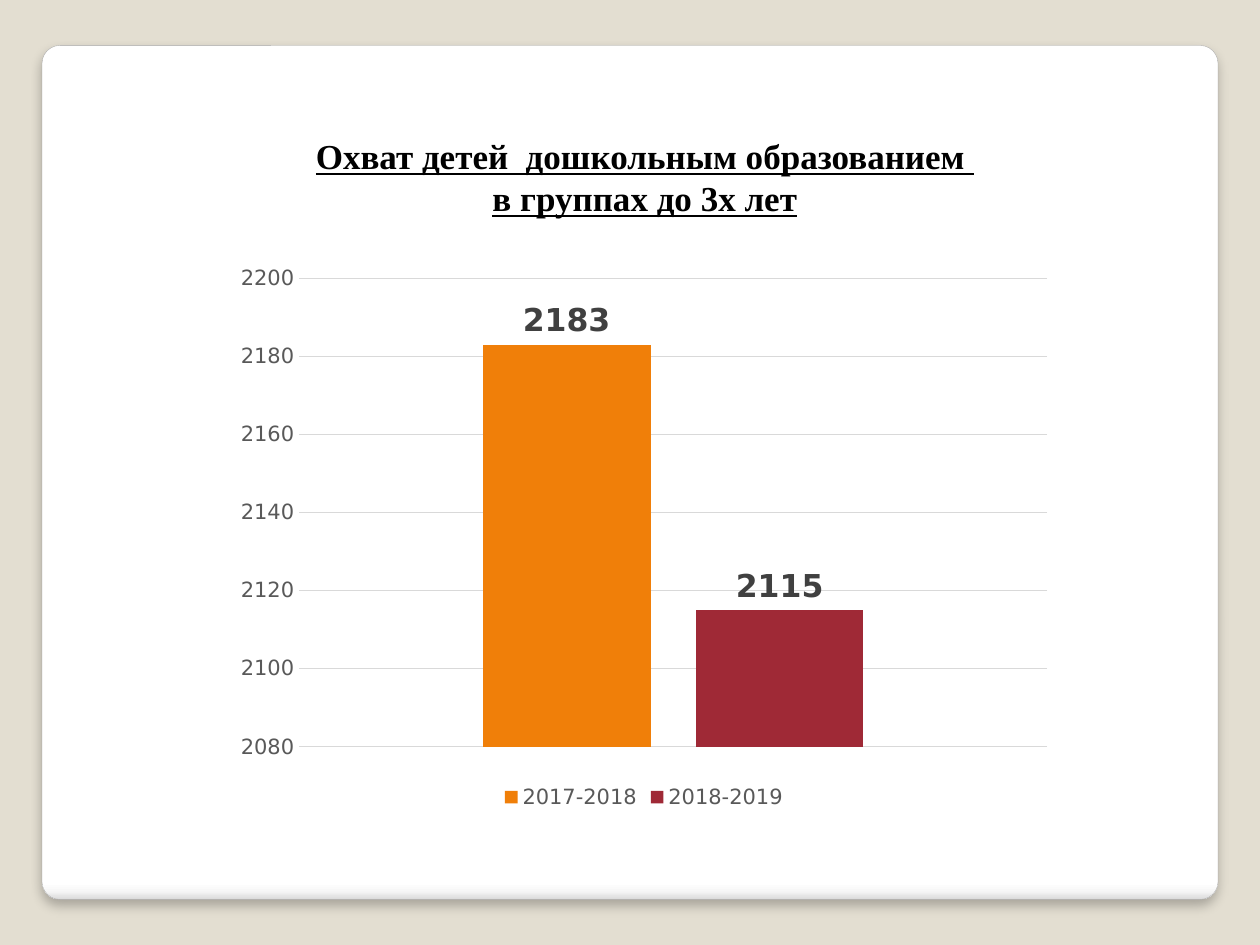
from lxml import etree
from pptx import Presentation
from pptx import util as u
from pptx.chart import data
from pptx.dml import color
from pptx.enum import chart as ch, shapes, text

NS = "http://schemas.openxmlformats.org/drawingml/2006/main"


def rgb(value):
    """Return the colour for a hex string."""
    return color.RGBColor.from_string(value)


def set_font(font, name, size, hex_color, bold=False, underline=None):
    """Set the typeface, size, colour and weight of a font."""
    font.name, font.size = name, u.Pt(size)
    font.bold, font.underline = bold, underline
    font.color.rgb = rgb(hex_color)


def add_card(s, x, y, w, h):
    """Add the rounded white card with a shaded foot and a soft shadow."""
    sp = s.shapes.add_shape(shapes.MSO_SHAPE.ROUNDED_RECTANGLE,
                            u.Pt(x), u.Pt(y), u.Pt(w), u.Pt(h))
    sp.adjustments[0] = 0.021
    sp.line.color.rgb = rgb("A4A4A4")
    sp.line.width = u.Pt(0.16)
    sp.shadow.inherit = False
    stops = [(0, "FFFFFF"), (98, "FFFFFF"), (99, "F7F7F7"), (100, "DADADA")]
    gs = "".join(f'<a:gs pos="{pos * 1000}"><a:srgbClr val="{c}"/></a:gs>'
                 for pos, c in stops)
    fill = etree.fromstring(
        f'<a:gradFill xmlns:a="{NS}" rotWithShape="1"><a:gsLst>{gs}</a:gsLst>'
        '<a:lin ang="5400000" scaled="0"/></a:gradFill>')
    shadow = etree.fromstring(
        f'<a:outerShdw xmlns:a="{NS}" blurRad="{u.Pt(6)}" dist="{u.Pt(4)}" '
        'dir="5400000" algn="t" rotWithShape="0"><a:srgbClr val="000000">'
        '<a:alpha val="25000"/></a:srgbClr></a:outerShdw>')
    props = sp._element.spPr
    props.insert(2, fill)
    props.find(f"{{{NS}}}effectLst").append(shadow)


def add_title(s, x, y, w, h, lines):
    """Add the centred, underlined title, one paragraph a line."""
    tf = s.shapes.add_textbox(u.Pt(x), u.Pt(y), u.Pt(w), u.Pt(h)).text_frame
    tf.word_wrap = True
    tf.text = "\n".join(lines)
    for p in tf.paragraphs:
        p.alignment = text.PP_ALIGN.CENTER
        for r in p.runs:
            set_font(r.font, "Times New Roman", 20, "000000", True, True)


def add_column_chart(s, x, y, w, h, series):
    """Add the clustered columns from (name, value, colour) rows."""
    cd = data.CategoryChartData()
    cd.categories = ["1"]
    for name, value, _ in series:
        cd.add_series(name, [value])
    chart = s.shapes.add_chart(ch.XL_CHART_TYPE.COLUMN_CLUSTERED, u.Pt(x),
                               u.Pt(y), u.Pt(w), u.Pt(h), cd).chart
    set_font(chart.font, "DejaVu Sans", 10, "000000")
    chart.has_title = False
    chart.has_legend = True
    chart.legend.position = ch.XL_LEGEND_POSITION.BOTTOM
    chart.legend.include_in_layout = False
    set_font(chart.legend.font, "DejaVu Sans", 12, "595959")

    chart.category_axis.visible = False
    axis = chart.value_axis
    axis.minimum_scale, axis.maximum_scale, axis.major_unit = 2080, 2200, 20
    axis.major_tick_mark = axis.minor_tick_mark = ch.XL_TICK_MARK.NONE
    axis.format.line.fill.background()
    grid = axis.major_gridlines.format.line
    grid.color.rgb = rgb("D9D9D9")
    grid.width = u.Pt(0.75)
    set_font(axis.tick_labels.font, "DejaVu Sans", 12, "595959")

    plot = chart.plots[0]
    plot.gap_width, plot.overlap, plot.vary_by_categories = 219, -27, False
    for column, (_, _, hex_color) in zip(plot.series, series):
        column.format.fill.solid()
        column.format.fill.fore_color.rgb = rgb(hex_color)
        labels = column.data_labels
        labels.show_value = True
        labels.position = ch.XL_LABEL_POSITION.OUTSIDE_END
        set_font(labels.font, "DejaVu Sans", 18, "404040", True)


def main():
    """Build the slide and save it."""
    prs = Presentation()
    prs.slide_width, prs.slide_height = u.Pt(720), u.Pt(540)
    s = prs.slides.add_slide(prs.slide_layouts[6])
    s.background.fill.solid()
    s.background.fill.fore_color.rgb = rgb("E3DED1")
    add_card(s, 24, 26, 672, 488)
    add_title(s, 101.5, 73.5, 534, 55.5,
              ["Охват детей  дошкольным образованием ", "в группах до 3х лет"])
    add_column_chart(s, 128, 145.5, 480, 320,
                     [("2017-2018", 2183, "F07F09"),
                      ("2018-2019", 2115, "9F2936")])
    prs.save("out.pptx")


if __name__ == "__main__":
    main()
